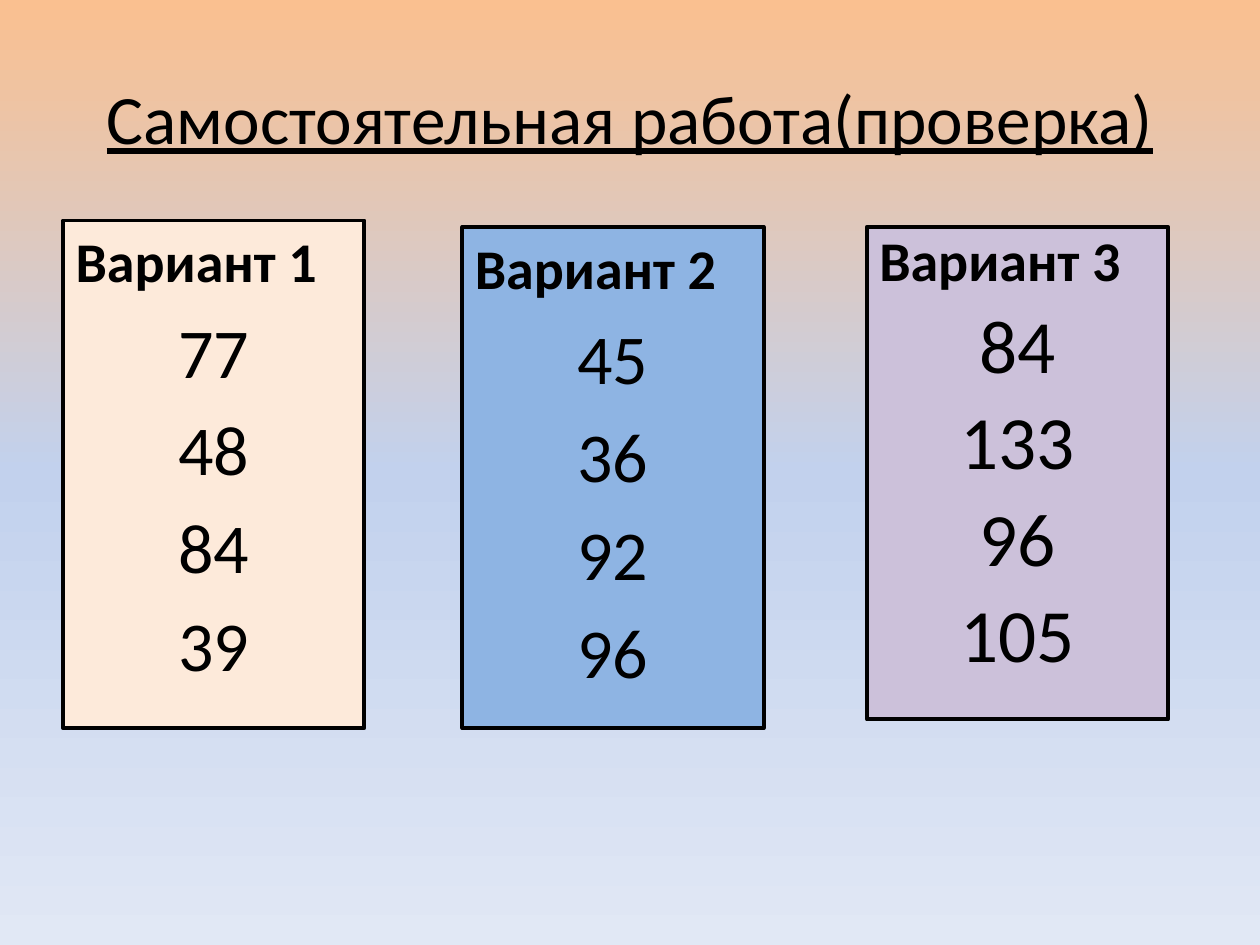
from copy import deepcopy

from lxml import etree
from pptx import Presentation
from pptx import util as u
from pptx.dml.color import RGBColor
from pptx.enum import shapes, text
from pptx.oxml.ns import qn


def paint(color_format, value):
    color_format.rgb = RGBColor.from_string(value)


def add_run(paragraph, words, size, bold=False, underline=False):
    run = paragraph.add_run()
    run.text = words
    run.font.name = "Calibri"
    run.font.size = u.Pt(size)
    run.font.bold = bold
    run.font.underline = underline
    paint(run.font.color, "000000")


presentation = Presentation()
presentation.slide_width = u.Inches(10)
presentation.slide_height = u.Inches(7.5)
slide = presentation.slides.add_slide(presentation.slide_layouts[1])

# Background: three-stop vertical gradient
background = slide.background.fill
background.gradient()
background.gradient_angle = 270
stops = background.gradient_stops
first_stop = slide.background._cSld.find(".//" + qn("a:gs"))
first_stop.addnext(deepcopy(first_stop))
stops = background.gradient_stops
for stop, position, color in zip(stops, (0, 0.5, 1), ("FAC090", "C2D1ED", "E1E8F5")):
    stop.position = position
    paint(stop.color, color)

# Title
title = slide.shapes.title
title.left, title.top = u.Inches(0.5), u.Inches(0.3)
title.width, title.height = u.Inches(9), u.Inches(1.25)
title.text_frame.auto_size = text.MSO_AUTO_SIZE.NONE
title.text_frame.vertical_anchor = text.MSO_ANCHOR.MIDDLE
paragraph = title.text_frame.paragraphs[0]
paragraph.alignment = text.PP_ALIGN.CENTER
add_run(paragraph, "Самостоятельная работа(проверка)", 39.6, underline=True)

# Answer cards: left, top, height, fill, answer size, line spacing, answers
cards = [
    (0.5, 1.75, 4.03, "FDEADA", 40, None, ("77", "48", "84", "39")),
    (3.67, 1.8, 3.98, "8EB4E3", 40, None, ("45", "36", "92", "96")),
    (6.88, 1.8, 3.91, "CCC1DA", 43, 0.9, ("84", "133", "96", "105")),
]
card_width = u.Inches(2.39)
for number, (left, top, height, fill, size, spacing, answers) in enumerate(cards, 1):
    box = u.Inches(left), u.Inches(top), card_width, u.Inches(height)
    if number == 1:
        card = slide.placeholders[1]
        card.left, card.top, card.width, card.height = box
    else:
        card = slide.shapes.add_shape(shapes.MSO_SHAPE.RECTANGLE, *box)
        card.shadow.inherit = False
    card.fill.solid()
    paint(card.fill.fore_color, fill)
    paint(card.line.color, "000000")
    card.line.width = u.Pt(2.25)

    frame = card.text_frame
    frame.word_wrap = True
    frame.auto_size = text.MSO_AUTO_SIZE.NONE
    frame.vertical_anchor = text.MSO_ANCHOR.TOP
    for row, words in enumerate((f"Вариант {number}", *answers)):
        heading = row == 0
        paragraph = frame.paragraphs[0] if heading else frame.add_paragraph()
        paragraph.alignment = text.PP_ALIGN.LEFT if heading else text.PP_ALIGN.CENTER
        paragraph.line_spacing = spacing
        # Hanging indent, relative space before, no bullet
        properties = paragraph._p.get_or_add_pPr()
        properties.set("marL", str(u.Inches(0.38)))
        properties.set("indent", str(u.Inches(-0.38)))
        before = etree.SubElement(properties, qn("a:spcBef"))
        etree.SubElement(before, qn("a:spcPct")).set("val", "20000")
        etree.SubElement(properties, qn("a:buNone"))
        add_run(paragraph, words, 32 if heading else size, bold=heading)

presentation.save("out.pptx")
